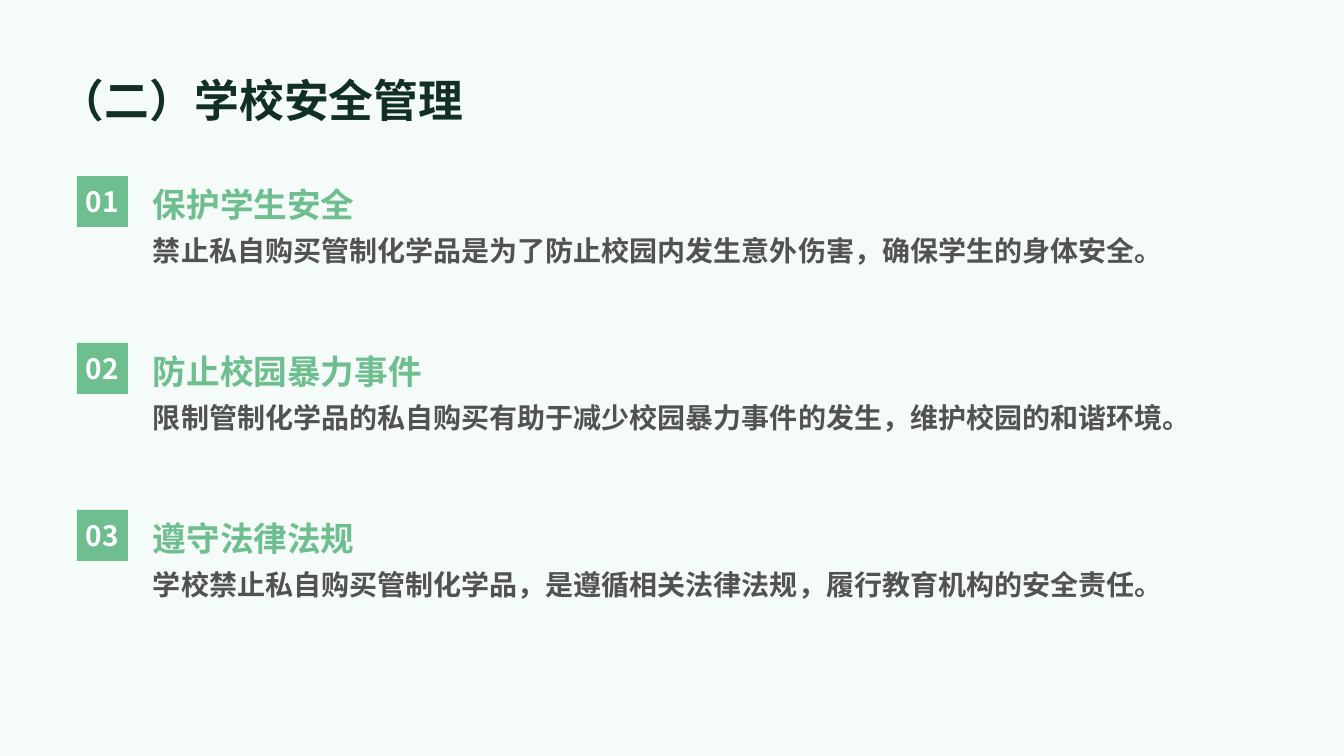
import lxml.etree
import pptx
import pptx.dml.color
import pptx.enum.shapes
import pptx.enum.text
import pptx.oxml.ns
import pptx.util

EMU_PER_PX = 914400 / 100.8
ANCHOR = pptx.enum.text.MSO_ANCHOR
ALIGN = pptx.enum.text.PP_ALIGN


def px(length):
    return pptx.util.Emu(round(length * EMU_PER_PX))


def color(value):
    return pptx.dml.color.RGBColor.from_string(value)


class SlideBuilder:
    font = "Noto Sans CJK SC"
    background = "F4FBF8"
    title_color = "112F22"
    accent = "6EBE90"
    body_color = "525252"
    badge_text = "FFFFFF"

    def __init__(self, presentation):
        self.slide = presentation.slides.add_slide(presentation.slide_layouts[6])
        fill = self.slide.background.fill
        fill.solid()
        fill.fore_color.rgb = color(self.background)

    def set_text(self, shape, text, size, text_color, anchor, align=ALIGN.LEFT,
                 wrap=True, line_spacing=1.0, bottom=0):
        frame = shape.text_frame
        frame.word_wrap = wrap
        frame.vertical_anchor = anchor
        frame.margin_left = frame.margin_top = frame.margin_right = 0
        frame.margin_bottom = px(bottom)
        paragraph = frame.paragraphs[0]
        paragraph.alignment = align
        paragraph.line_spacing = line_spacing
        run = paragraph.add_run()
        run.text = text
        run.font.size = pptx.util.Pt(size)
        run.font.bold = True
        run.font.color.rgb = color(text_color)
        run.font.name = self.font
        east_asian = lxml.etree.SubElement(
            run._r.get_or_add_rPr(), pptx.oxml.ns.qn("a:ea"))
        east_asian.set("typeface", self.font)

    def text(self, left, top, width, height, text, size, text_color,
             anchor=ANCHOR.BOTTOM, **options):
        box = self.slide.shapes.add_textbox(
            px(left), px(top), px(width), px(height))
        self.set_text(box, text, size, text_color, anchor, **options)

    def badge(self, left, top, side, text):
        shape = self.slide.shapes.add_shape(
            pptx.enum.shapes.MSO_SHAPE.RECTANGLE,
            px(left), px(top), px(side), px(side))
        shape.shadow.inherit = False
        shape.fill.solid()
        shape.fill.fore_color.rgb = color(self.accent)
        shape.line.fill.background()
        self.set_text(shape, text, 20, self.badge_text, ANCHOR.MIDDLE,
                      align=ALIGN.CENTER, wrap=False)

    def item(self, top, number, heading, body):
        self.badge(77, top, 51, f"{number:02d}")
        self.text(153, top, 1114, 48, heading, 24, self.accent)
        self.text(153, top + 49, 1114, 91, body, 20, self.body_color,
                  anchor=ANCHOR.TOP, line_spacing=1.3, bottom=47)


ITEMS = [
    ("保护学生安全",
     "禁止私自购买管制化学品是为了防止校园内发生意外伤害，确保学生的身体安全。"),
    ("防止校园暴力事件",
     "限制管制化学品的私自购买有助于减少校园暴力事件的发生，维护校园的和谐环境。"),
    ("遵守法律法规",
     "学校禁止私自购买管制化学品，是遵循相关法律法规，履行教育机构的安全责任。"),
]
FIRST_TOP = 176
ITEM_PITCH = 167


def main():
    presentation = pptx.Presentation()
    presentation.slide_width = px(1344)
    presentation.slide_height = px(756)
    builder = SlideBuilder(presentation)
    builder.text(60, 48, 1190, 78, "（二）学校安全管理", 32, builder.title_color)
    for index, (heading, body) in enumerate(ITEMS):
        builder.item(FIRST_TOP + index * ITEM_PITCH, index + 1, heading, body)
    presentation.save("out.pptx")


if __name__ == "__main__":
    main()
